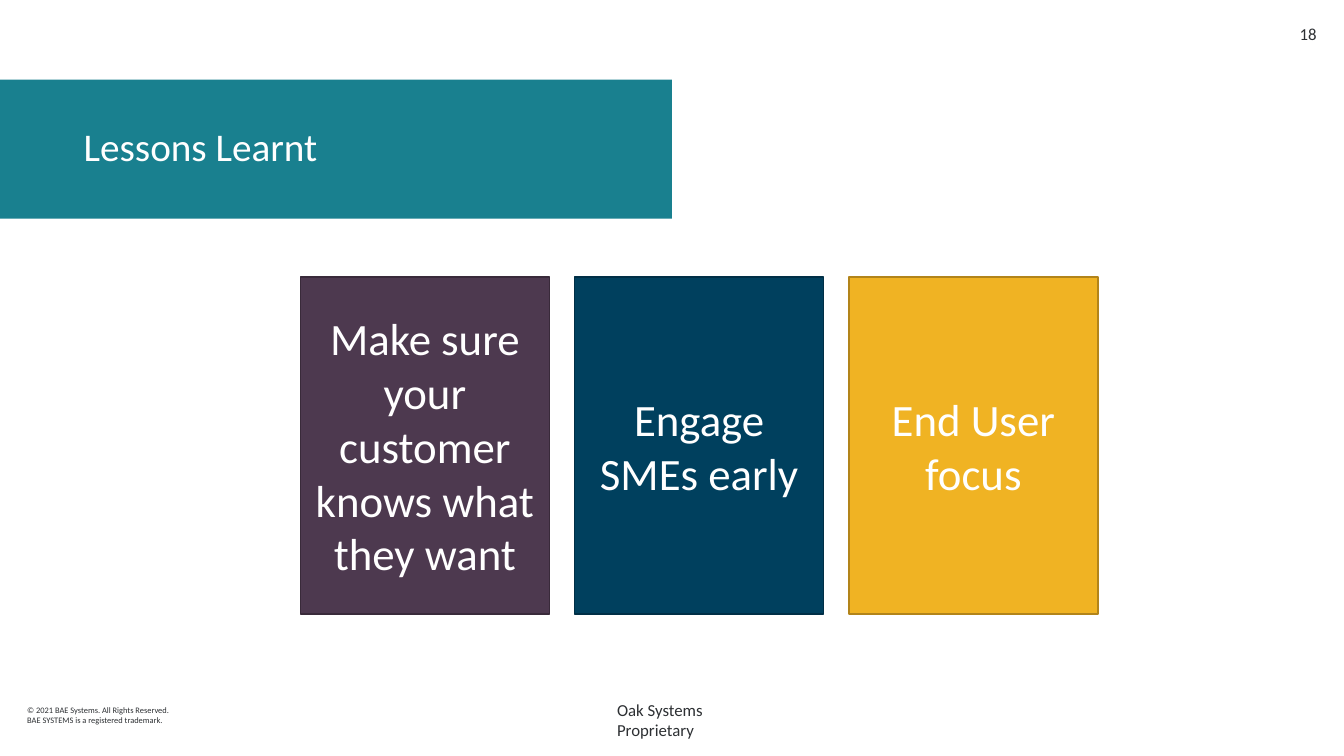
import pptx
import pptx.dml.color
import pptx.enum.shapes
import pptx.enum.text
import pptx.oxml
import pptx.oxml.ns
import pptx.util

RGBColor = pptx.dml.color.RGBColor
Inches = pptx.util.Inches
Align = pptx.enum.text.PP_ALIGN
Anchor = pptx.enum.text.MSO_ANCHOR

WHITE = RGBColor(0xFF, 0xFF, 0xFF)
INK = RGBColor(0x2D, 0x30, 0x33)
TEAL = RGBColor(0x00, 0x73, 0x83)
PLUM, PLUM_EDGE = RGBColor(0x4D, 0x39, 0x4F), RGBColor(0x39, 0x2A, 0x3A)
NAVY, NAVY_EDGE = RGBColor(0x00, 0x40, 0x5E), RGBColor(0x00, 0x2F, 0x46)
AMBER, AMBER_EDGE = RGBColor(0xF0, 0xB3, 0x23), RGBColor(0xB2, 0x84, 0x1A)

TITLE = "Lessons Learnt"
LESSONS = [
    ("Make sure your customer knows what they want", PLUM, PLUM_EDGE),
    ("Engage SMEs early", NAVY, NAVY_EDGE),
    ("End User focus", AMBER, AMBER_EDGE),
]
COPYRIGHT = [
    "© 2021 BAE Systems. All Rights Reserved.",
    "BAE SYSTEMS is a registered trademark.",
]
MARKING = "Oak Systems Proprietary"
PAGE_NUMBER = "18"

SLIDE_WIDTH, SLIDE_HEIGHT = 13.33, 7.5
CARD_LEFT, CARD_TOP = 2.98, 2.75
CARD_WIDTH, CARD_HEIGHT = 2.47, 3.34
CARD_GAP = 0.25


def write(shape, lines, size, color=INK, align=Align.LEFT, anchor=Anchor.MIDDLE,
          margins=(0, 0, 0, 0), line_spacing=None):
    """Fill a shape with paragraphs; margins are left, top, right, bottom in inches."""
    frame = shape.text_frame
    frame.word_wrap = True
    frame.vertical_anchor = anchor
    (frame.margin_left, frame.margin_top,
     frame.margin_right, frame.margin_bottom) = map(Inches, margins)
    frame.text = "\n".join(lines)
    for paragraph in frame.paragraphs:
        paragraph.alignment = align
        paragraph.line_spacing = line_spacing
        for run in paragraph.runs:
            run.font.name = "Calibri"
            run.font.size = pptx.util.Pt(size)
            run.font.color.rgb = color


def add_label(slide, box, lines, size, **text_format):
    write(slide.shapes.add_textbox(*map(Inches, box)), lines, size, **text_format)


def add_block(slide, box, fill, edge=None):
    block = slide.shapes.add_shape(
        pptx.enum.shapes.MSO_SHAPE.RECTANGLE, *map(Inches, box))
    block.shadow.inherit = False
    block.fill.solid()
    block.fill.fore_color.rgb = fill
    if edge is None:
        block.line.fill.background()
    else:
        block.line.color.rgb = edge
        block.line.width = pptx.util.Pt(1)
    return block


def set_opacity(shape, percent):
    color = shape.fill._xPr.find(".//" + pptx.oxml.ns.qn("a:srgbClr"))
    color.append(pptx.oxml.parse_xml(
        f'<a:alpha {pptx.oxml.ns.nsdecls("a")} val="{percent * 1000}"/>'))


def main():
    deck = pptx.Presentation()
    deck.slide_width, deck.slide_height = Inches(SLIDE_WIDTH), Inches(SLIDE_HEIGHT)
    slide = deck.slides.add_slide(deck.slide_layouts[6])

    add_label(slide, (0.27, 6.93, 1.79, 0.32), COPYRIGHT, 6)
    add_label(slide, (6.12, 6.94, 1.2, 0.4), [MARKING], 12, anchor=Anchor.TOP)
    add_label(slide, (12.66, 0.27, 0.4, 0.14), [PAGE_NUMBER], 12, align=Align.RIGHT)

    banner = add_block(slide, (0, 0.79, SLIDE_WIDTH / 2, 1.38), TEAL)
    set_opacity(banner, 90)
    write(banner, [TITLE], 28, color=WHITE, margins=(0.83, 0, 0, 0), line_spacing=0.9)

    for column, (lesson, fill, edge) in enumerate(LESSONS):
        left = CARD_LEFT + column * (CARD_WIDTH + CARD_GAP)
        card = add_block(slide, (left, CARD_TOP, CARD_WIDTH, CARD_HEIGHT), fill, edge)
        write(card, [lesson], 32, color=WHITE, align=Align.CENTER,
              margins=(0.1, 0.05, 0.1, 0.05))

    deck.save("out.pptx")


if __name__ == "__main__":
    main()
